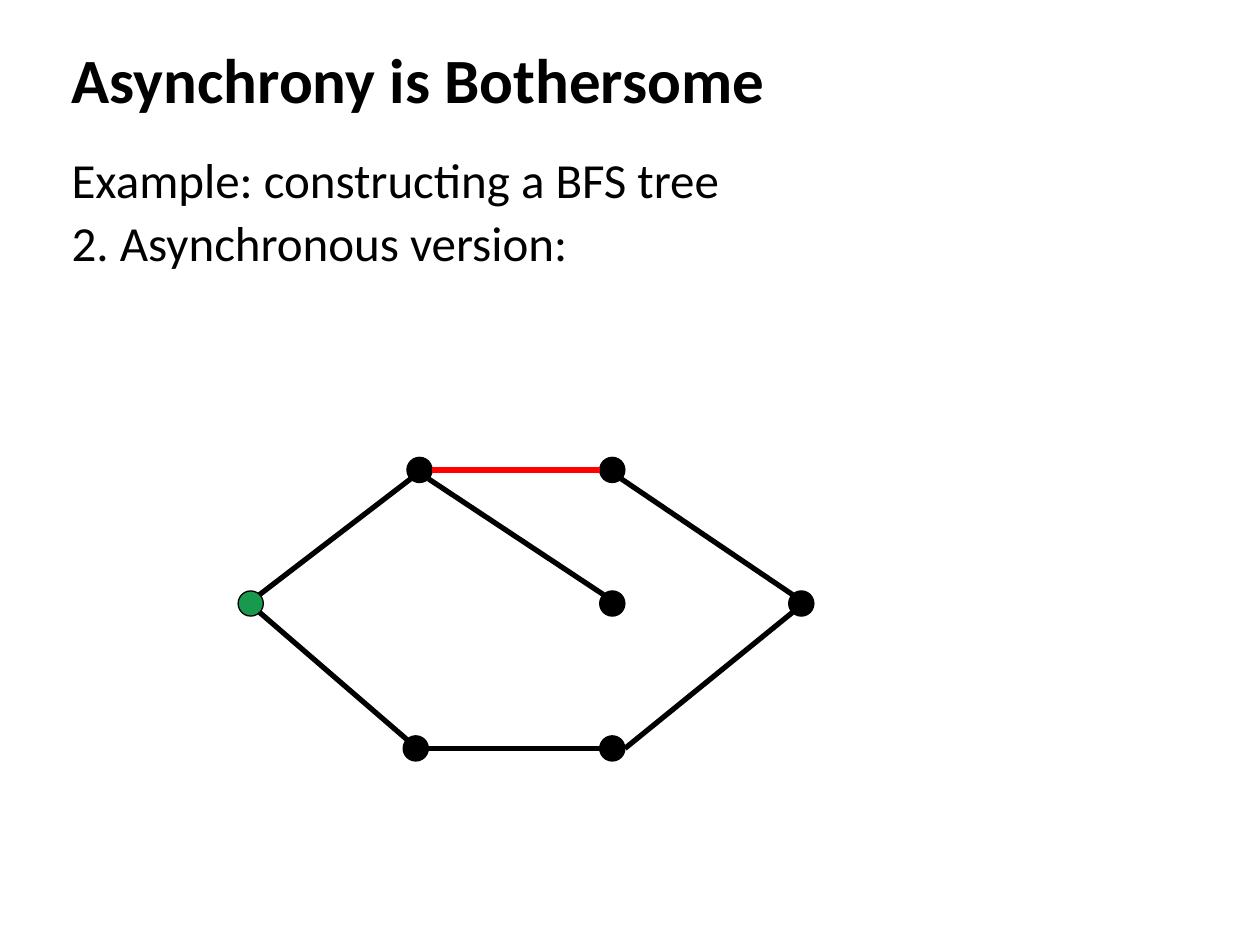
from dataclasses import dataclass
from math import cos, radians, sin

from lxml import etree
from pptx import Presentation
from pptx import util as u
from pptx.dml.color import RGBColor
from pptx.enum import shapes, text
from pptx.oxml import ns

BLACK, GREEN, RED = "000000", "19994D", "FF0000"
RADIUS = 0.1


@dataclass(frozen=True)
class Node:
    x: float
    y: float
    color: str = BLACK

    def rim(self, degrees: int) -> tuple[float, float]:
        angle = radians(degrees)
        return self.x + RADIUS * cos(angle), self.y - RADIUS * sin(angle)


@dataclass(frozen=True)
class Edge:
    start: str
    start_angle: int
    end: str
    end_angle: int
    color: str = BLACK


TOP, MIDDLE, BOTTOM = 3.73, 4.79, 5.94
NODES = {
    "root": Node(1.99, MIDDLE, GREEN),
    "upper left": Node(3.33, TOP),
    "lower left": Node(3.3, BOTTOM),
    "upper right": Node(4.86, TOP),
    "lower right": Node(4.86, BOTTOM),
    "inner": Node(4.86, MIDDLE),
    "far": Node(6.36, MIDDLE),
}
EDGES = [
    Edge("root", 45, "upper left", 225),
    Edge("root", 315, "lower left", 135),
    Edge("upper left", 0, "upper right", 180, RED),
    Edge("upper left", 315, "inner", 135),
    Edge("lower left", 0, "lower right", 180),
    Edge("lower right", 0, "far", 225),
    Edge("upper right", 315, "far", 135),
]


def rgb(value: str) -> RGBColor:
    return RGBColor.from_string(value)


def add_text(slide, box: tuple[float, ...], lines: list[str], size: int,
             anchor, bold: bool = False) -> list:
    frame = slide.shapes.add_textbox(*map(u.Inches, box)).text_frame
    frame.word_wrap = True
    frame.vertical_anchor = anchor
    frame.text = "\n".join(lines)
    for paragraph in frame.paragraphs:
        font = paragraph.font
        font.name, font.size, font.bold = "Calibri", u.Pt(size), bold
        font.color.rgb = rgb(BLACK)
    return list(frame.paragraphs)


def add_node(slide, node: Node) -> None:
    shape = slide.shapes.add_shape(
        shapes.MSO_SHAPE.OVAL,
        u.Inches(node.x - RADIUS), u.Inches(node.y - RADIUS),
        u.Inches(2 * RADIUS), u.Inches(2 * RADIUS))
    shape.shadow.inherit = False
    shape.fill.solid()
    shape.fill.fore_color.rgb = rgb(node.color)
    shape.line.color.rgb = rgb(BLACK)
    shape.line.width = u.Pt(0.75)


def add_edge(slide, edge: Edge) -> None:
    ends = (*NODES[edge.start].rim(edge.start_angle),
            *NODES[edge.end].rim(edge.end_angle))
    connector = slide.shapes.add_connector(
        shapes.MSO_CONNECTOR.STRAIGHT, *map(u.Inches, ends))
    connector.line.color.rgb = rgb(edge.color)
    connector.line.width = u.Pt(3)
    etree.SubElement(connector._element.spPr, ns.qn("a:effectLst"))


def main() -> None:
    presentation = Presentation()
    presentation.slide_width = u.Inches(10)
    presentation.slide_height = u.Inches(7.5)
    slide = presentation.slides.add_slide(presentation.slide_layouts[6])

    add_text(slide, (0.47, 0.25, 9.19, 0.75), ["Asynchrony is Bothersome"],
             36, text.MSO_ANCHOR.MIDDLE, bold=True)
    body = add_text(slide, (0.47, 1.19, 8.82, 1.22),
                    ["Example: constructing a BFS tree", "2. Asynchronous version:"],
                    28, text.MSO_ANCHOR.TOP)
    for paragraph in body:
        paragraph.line_spacing = 0.9
        paragraph.space_before = u.Pt(5.6)
        properties = paragraph._p.get_or_add_pPr()
        properties.set("marL", str(u.Inches(0.56)))
        properties.set("indent", str(u.Inches(-0.56)))

    for node in NODES.values():
        add_node(slide, node)
    for edge in EDGES:
        add_edge(slide, edge)
    presentation.save("out.pptx")


if __name__ == "__main__":
    main()
